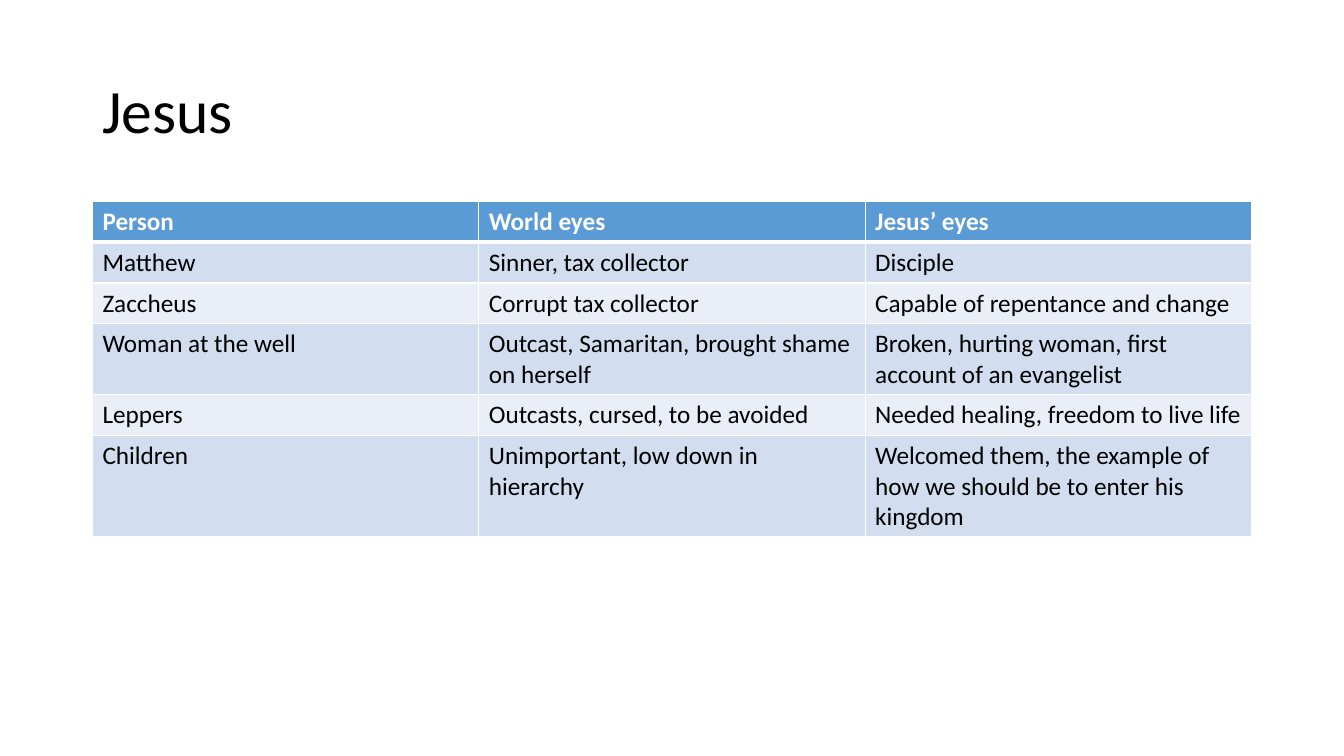
from dataclasses import dataclass

from lxml.etree import SubElement
from pptx import Presentation
from pptx.dml.color import RGBColor
from pptx.enum.text import MSO_ANCHOR
from pptx.oxml.ns import qn
from pptx.util import Cm, Pt

TITLE = "Jesus"
ROWS = [
    ("Person", "World eyes", "Jesus’ eyes"),
    ("Matthew", "Sinner, tax collector", "Disciple"),
    ("Zaccheus", "Corrupt tax collector", "Capable of repentance and change"),
    ("Woman at the well", "Outcast, Samaritan, brought shame on herself",
     "Broken, hurting woman, first account of an evangelist"),
    ("Leppers", "Outcasts, cursed, to be avoided", "Needed healing, freedom to live life"),
    ("Children", "Unimportant, low down in hierarchy",
     "Welcomed them, the example of how we should be to enter his kingdom"),
]


@dataclass(frozen=True)
class Theme:
    font: str = "Calibri"
    title_size: int = 44
    table_size: int = 18
    text: str = "000000"
    white: str = "FFFFFF"
    header: str = "5B9BD5"
    bands: tuple = ("D2DEEF", "EAEFF7")
    thin: int = 1
    thick: int = 3


THEME = Theme()
LEFT, WIDTH = Cm(2.33), Cm(29.21)
TITLE_TOP, TITLE_HEIGHT = Cm(1.01), Cm(3.68)
TABLE_TOP, ROW_HEIGHT = Cm(5.07), Cm(1.03)


def write(paragraph, text, size, color, bold=False):
    run = paragraph.add_run()
    run.text = text
    run.font.name = THEME.font
    run.font.size = Pt(size)
    run.font.bold = bold
    run.font.color.rgb = RGBColor.from_string(color)


def add_borders(cell, widths):
    properties = cell._tc.get_or_add_tcPr()
    for side, width in widths.items():
        line = SubElement(properties, qn(f"a:ln{side}"), w=str(Pt(width)))
        fill = SubElement(line, qn("a:solidFill"))
        SubElement(fill, qn("a:srgbClr"), val=THEME.white)


def add_title(slide):
    box = slide.shapes.add_textbox(LEFT, TITLE_TOP, WIDTH, TITLE_HEIGHT)
    frame = box.text_frame
    frame.word_wrap = True
    frame.vertical_anchor = MSO_ANCHOR.MIDDLE
    paragraph = frame.paragraphs[0]
    paragraph.line_spacing = 0.9
    write(paragraph, TITLE, THEME.title_size, THEME.text)


def add_people_table(slide):
    table = slide.shapes.add_table(
        len(ROWS), len(ROWS[0]), LEFT, TABLE_TOP, WIDTH, ROW_HEIGHT * len(ROWS)
    ).table
    for row_index, row in enumerate(ROWS):
        is_header = row_index == 0
        background = THEME.header if is_header else THEME.bands[(row_index - 1) % 2]
        color = THEME.white if is_header else THEME.text
        widths = {
            "L": THEME.thin,
            "R": THEME.thin,
            "T": THEME.thick if row_index == 1 else THEME.thin,
            "B": THEME.thick if is_header else THEME.thin,
        }
        for column_index, text in enumerate(row):
            cell = table.cell(row_index, column_index)
            add_borders(cell, widths)
            cell.fill.solid()
            cell.fill.fore_color.rgb = RGBColor.from_string(background)
            write(cell.text_frame.paragraphs[0], text, THEME.table_size, color, is_header)


def main():
    presentation = Presentation()
    presentation.slide_width = Cm(33.87)
    presentation.slide_height = Cm(19.05)
    slide = presentation.slides.add_slide(presentation.slide_layouts[6])
    add_title(slide)
    add_people_table(slide)
    presentation.save("out.pptx")


if __name__ == "__main__":
    main()
